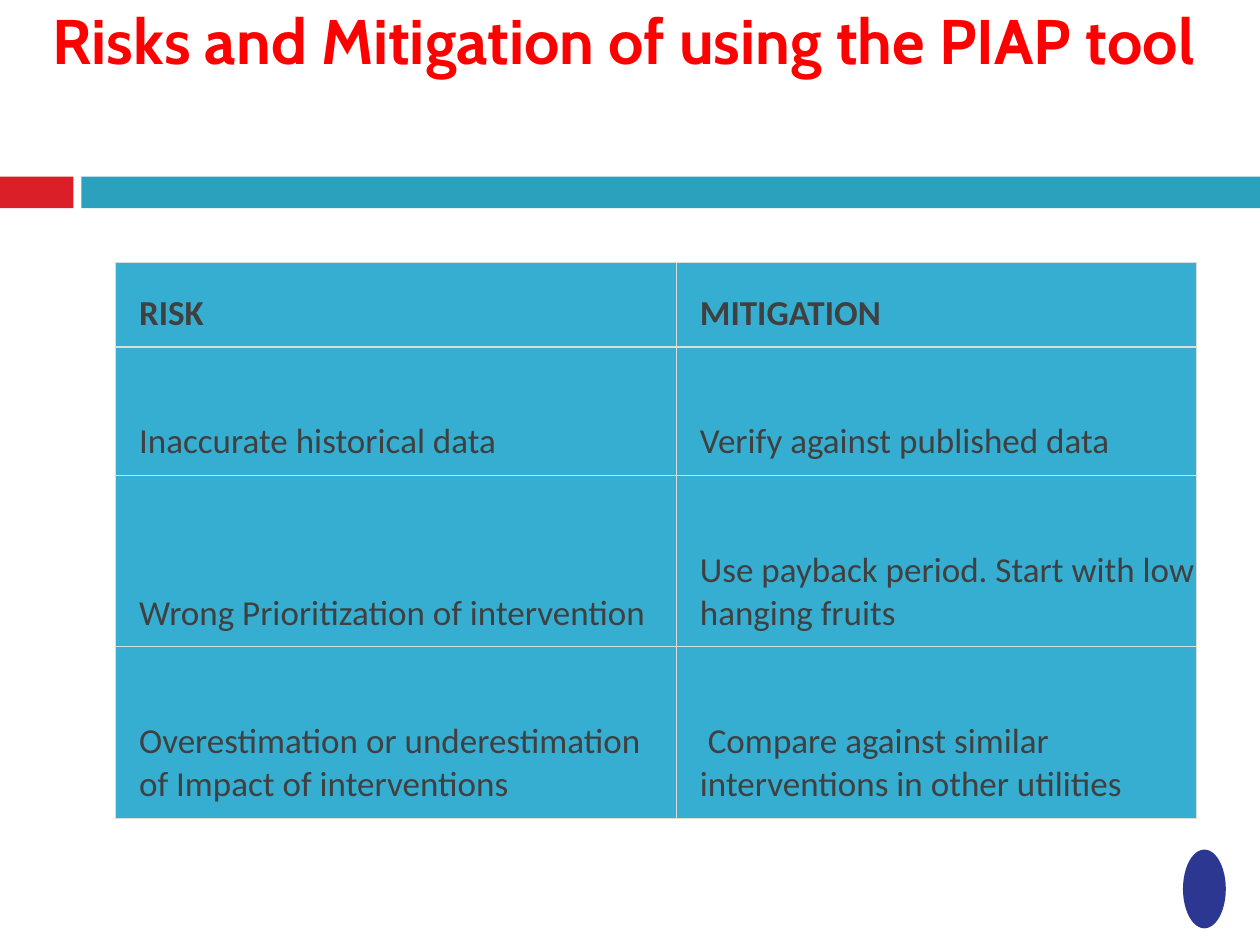
from lxml.etree import SubElement
from pptx import Presentation
from pptx.dml.color import RGBColor
from pptx.enum.shapes import MSO_SHAPE
from pptx.enum.text import MSO_ANCHOR
from pptx.oxml.ns import qn
from pptx.util import Pt

ROWS = [
    ("RISK", "MITIGATION"),
    ("Inaccurate historical data", "Verify against published data"),
    ("Wrong Prioritization of intervention",
     "Use payback period. Start with low hanging fruits"),
    ("Overestimation or underestimation of Impact of interventions",
     " Compare against similar interventions in other utilities"),
]
COL_WIDTHS = [320.5, 297.25]
ROW_HEIGHTS = [48.25, 73.25, 98, 98]


def rgb(color):
    return RGBColor.from_string(color)


def write(tf, text, font="Calibri", size=20, color="404040", bold=False,
          anchor=MSO_ANCHOR.TOP, margins=(0, 0, 0, 0)):
    tf.word_wrap = True
    tf.vertical_anchor = anchor
    (tf.margin_left, tf.margin_top,
     tf.margin_right, tf.margin_bottom) = map(Pt, margins)
    r = tf.paragraphs[0].add_run()
    r.text = text
    r.font.name, r.font.size, r.font.bold = font, Pt(size), bold
    r.font.color.rgb = rgb(color)


def add_block(s, kind, left, top, width, height, color):
    sp = s.shapes.add_shape(kind, Pt(left), Pt(top), Pt(width), Pt(height))
    sp.shadow.inherit = False
    sp.fill.solid()
    sp.fill.fore_color.rgb = rgb(color)
    sp.line.fill.background()


def set_borders(cell, color, width):
    tc_pr = cell._tc.get_or_add_tcPr()
    for i, side in enumerate(("a:lnL", "a:lnR", "a:lnT", "a:lnB")):
        ln = SubElement(tc_pr, qn(side), w=str(Pt(width)))
        fill = SubElement(ln, qn("a:solidFill"))
        SubElement(fill, qn("a:srgbClr"), val=color)
        tc_pr.insert(i, ln)  # borders come before the cell fill


def add_risk_table(s, left, top):
    table = s.shapes.add_table(
        len(ROWS), len(COL_WIDTHS), Pt(left), Pt(top),
        Pt(sum(COL_WIDTHS)), Pt(sum(ROW_HEIGHTS))).table
    for col, width in zip(table.columns, COL_WIDTHS):
        col.width = Pt(width)
    for i, (row, height) in enumerate(zip(table.rows, ROW_HEIGHTS)):
        row.height = Pt(height)
        for cell, text in zip(row.cells, ROWS[i]):
            write(cell.text_frame, text, bold=i == 0)
            cell.vertical_anchor = MSO_ANCHOR.BOTTOM
            cell.margin_left, cell.margin_right = Pt(13.5), Pt(0.75)
            cell.margin_top = cell.margin_bottom = Pt(6.75)
            cell.fill.solid()
            cell.fill.fore_color.rgb = rgb("35AED2")
            set_borders(cell, "D8DEDC", 0.75)


def main():
    prs = Presentation()
    prs.slide_width, prs.slide_height = Pt(720), Pt(540)
    s = prs.slides.add_slide(prs.slide_layouts[6])

    # Divider bars
    add_block(s, MSO_SHAPE.RECTANGLE, 0, 101, 42, 18, "DA1F28")
    add_block(s, MSO_SHAPE.RECTANGLE, 46.5, 101, 673.5, 18, "2CA1BE")

    # Corner mark
    add_block(s, MSO_SHAPE.OVAL, 676, 485.5, 24.5, 45, "2C3791")

    # Title
    title = s.shapes.add_textbox(Pt(30.25), Pt(0.75), Pt(659), Pt(88.5))
    write(title.text_frame, "Risks and Mitigation of using the PIAP tool",
          font="Cabin", size=36, color="FF0000", bold=True)

    # Risks and their mitigation
    add_risk_table(s, 66, 150)

    prs.save("out.pptx")


if __name__ == "__main__":
    main()
